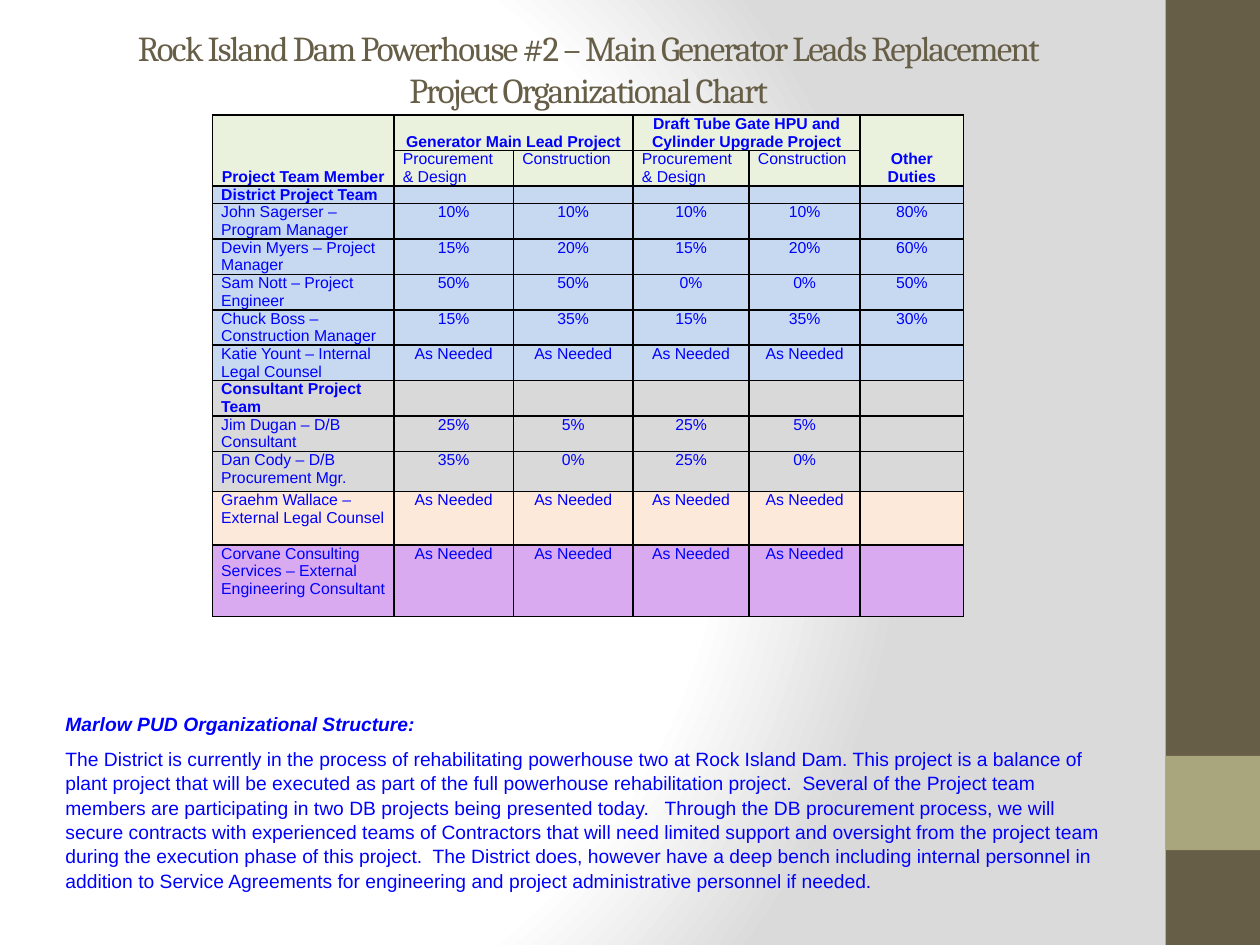
from pptx import Presentation
from pptx.dml.color import RGBColor
from pptx.enum.shapes import MSO_SHAPE
from pptx.enum.text import MSO_ANCHOR, MSO_AUTO_SIZE, PP_ALIGN
from pptx.oxml import parse_xml
from pptx.oxml.ns import nsdecls
from pptx.util import Cm, Pt

COLORS = {
    "white": "FFFFFF", "shade": "DADADA", "black": "000000",
    "brown": "675E47", "khaki": "A9A57C", "blue": "0000FF",
    "header": "EAF1DD", "district": "C6D9F1", "consultant": "D9D9D9",
    "legal": "FDE9D9", "engineering": "DAAAF0",
}
COL_WIDTHS = [3.66, 2.41, 2.41, 2.34, 2.24, 2.08]
LINE = 0.36
NEEDED = ["As Needed"] * 4 + [""]
BLANK = [""] * 5

HEADERS = [
    ["Project Team Member", "Generator Main Lead Project", "",
     "Draft Tube Gate HPU and Cylinder Upgrade Project", "", "Other Duties"],
    [""] + ["Procurement & Design", "Construction"] * 2 + [""],
]
MERGES = [(0, 0, 1, 0), (0, 1, 0, 2), (0, 3, 0, 4), (0, 5, 1, 5)]
TEAM = [
    ("district", LINE, "District Project Team", BLANK),
    ("district", 0.71, "John Sagerser – Program Manager", ["10%", "10%", "10%", "10%", "80%"]),
    ("district", 0.71, "Devin Myers – Project Manager", ["15%", "20%", "15%", "20%", "60%"]),
    ("district", 0.71, "Sam Nott – Project Engineer", ["50%", "50%", "0%", "0%", "50%"]),
    ("district", 0.71, "Chuck Boss – Construction Manager", ["15%", "35%", "15%", "35%", "30%"]),
    ("district", 0.71, "Katie Yount – Internal Legal Counsel", NEEDED),
    ("consultant", 0.71, "Consultant Project Team", BLANK),
    ("consultant", 0.71, "Jim Dugan – D/B Consultant", ["25%", "5%", "25%", "5%", ""]),
    ("consultant", 0.81, "Dan Cody – D/B Procurement Mgr.", ["35%", "0%", "25%", "0%", ""]),
    ("legal", 3 * LINE, "Graehm Wallace – External Legal Counsel", NEEDED),
    ("engineering", 4 * LINE, "Corvane Consulting Services – External Engineering Consultant", NEEDED),
]
STRUCTURE = (
    "The District is currently in the process of rehabilitating powerhouse two at Rock Island Dam. "
    "This project is a balance of plant project that will be executed as part of the full powerhouse "
    "rehabilitation project.  Several of the Project team members are participating in two DB projects "
    "being presented today.   Through the DB procurement process, we will secure contracts with "
    "experienced teams of Contractors that will need limited support and oversight from the project "
    "team during the execution phase of this project.  The District does, however have a deep bench "
    "including internal personnel in addition to Service Agreements for engineering and project "
    "administrative personnel if needed."
)


class Deck:
    def __init__(self):
        self.prs = Presentation()
        self.prs.slide_width, self.prs.slide_height = Cm(25.4), Cm(19.05)
        self.s = self.prs.slides.add_slide(self.prs.slide_layouts[5])

    def color(self, name):
        return RGBColor.from_string(COLORS[name])

    def font(self, p, size, color, name="Arial", bold=False, italic=False):
        p.font.name, p.font.size = name, Pt(size)
        p.font.bold, p.font.italic = bold, italic
        p.font.color.rgb = self.color(color)

    def background(self):
        stops = "".join(
            f'<a:gs pos="{pos}"><a:srgbClr val="{COLORS[name]}"/></a:gs>'
            for pos, name in [(0, "white"), (75000, "white"), (100000, "shade")])
        self.s.element.cSld.insert(0, parse_xml(
            f'<p:bg {nsdecls("p", "a")}><p:bgPr><a:gradFill rotWithShape="1">'
            f'<a:gsLst>{stops}</a:gsLst><a:path path="circle">'
            '<a:fillToRect l="20000" t="50000" r="100000" b="50000"/></a:path>'
            '</a:gradFill><a:effectLst/></p:bgPr></p:bg>'))

    def rect(self, left, top, width, height, color):
        sp = self.s.shapes.add_shape(
            MSO_SHAPE.RECTANGLE, Cm(left), Cm(top), Cm(width), Cm(height))
        sp.shadow.inherit = False
        sp.fill.solid()
        sp.fill.fore_color.rgb = self.color(color)
        sp.line.fill.background()

    def title(self, text, left, top, width, height):
        sp = self.s.shapes.title
        sp.left, sp.top, sp.width, sp.height = Cm(left), Cm(top), Cm(width), Cm(height)
        tf = sp.text_frame
        tf.text = text
        tf.auto_size = MSO_AUTO_SIZE.NONE
        tf.vertical_anchor = MSO_ANCHOR.MIDDLE
        p = tf.paragraphs[0]
        p.alignment = PP_ALIGN.CENTER
        self.font(p, 20, "brown", "Cambria")
        for r in p.runs:
            r.font._element.set("spc", "-100")

    def cell(self, cell, text, fill, bold=False, centered=False, bottom=False):
        cell.text = text
        cell.margin_left = cell.margin_right = Cm(0.18)
        cell.margin_top = cell.margin_bottom = 0
        cell.vertical_anchor = MSO_ANCHOR.BOTTOM if bottom else MSO_ANCHOR.TOP
        p = cell.text_frame.paragraphs[0]
        p.alignment = PP_ALIGN.CENTER if centered else PP_ALIGN.LEFT
        self.font(p, 9, "blue", bold=bold)
        tcPr = cell._tc.get_or_add_tcPr()
        for side in "LRTB":
            tcPr.append(parse_xml(
                f'<a:ln{side} {nsdecls("a")} w="12700"><a:solidFill>'
                f'<a:srgbClr val="{COLORS["black"]}"/></a:solidFill></a:ln{side}>'))
        cell.fill.solid()
        cell.fill.fore_color.rgb = self.color(fill)

    def team_table(self, left, top):
        heights = [0.71] * len(HEADERS) + [height for _, height, _, _ in TEAM]
        table = self.s.shapes.add_table(
            len(heights), len(COL_WIDTHS), Cm(left), Cm(top),
            Cm(sum(COL_WIDTHS)), Cm(sum(heights))).table
        table.first_row = table.horz_banding = False
        for col, width in zip(table.columns, COL_WIDTHS):
            col.width = Cm(width)
        for row, height in zip(table.rows, heights):
            row.height = Cm(height)
        for i, texts in enumerate(HEADERS):
            top_row = i == 0
            for j, text in enumerate(texts):
                self.cell(table.cell(i, j), text, "header", top_row, top_row, top_row)
        for i, (fill, _, member, shares) in enumerate(TEAM, len(HEADERS)):
            self.cell(table.cell(i, 0), member, fill, bold=shares is BLANK)
            for j, share in enumerate(shares, 1):
                self.cell(table.cell(i, j), share, fill, centered=True)
        for r1, c1, r2, c2 in MERGES:
            table.cell(r1, c1).merge(table.cell(r2, c2))

    def note(self, heading, text, left, top, width, height):
        tf = self.s.shapes.add_textbox(Cm(left), Cm(top), Cm(width), Cm(height)).text_frame
        tf.word_wrap = True
        tf.auto_size = MSO_AUTO_SIZE.SHAPE_TO_FIT_TEXT
        p = tf.paragraphs[0]
        p.text = heading
        p.alignment = PP_ALIGN.JUSTIFY
        p.space_before = p.space_after = Pt(6)
        self.font(p, 11, "blue", bold=True, italic=True)
        p = tf.add_paragraph()
        p.text = text
        self.font(p, 11, "blue")
        for p in tf.paragraphs:
            p.line_spacing = 1.05


def main():
    deck = Deck()
    deck.background()
    deck.rect(23.5, 0, 1.9, 19.05, "brown")
    deck.rect(23.5, 15.24, 1.9, 1.9, "khaki")
    deck.title("Rock Island Dam Powerhouse #2 – Main Generator Leads Replacement\v"
               "Project Organizational Chart", 1.07, 0.43, 21.59, 1.9)
    deck.team_table(4.28, 2.32)
    deck.note("Marlow PUD Organizational Structure:", STRUCTURE, 1.07, 14.22, 21.59, 3.76)
    deck.prs.save("out.pptx")


if __name__ == "__main__":
    main()
